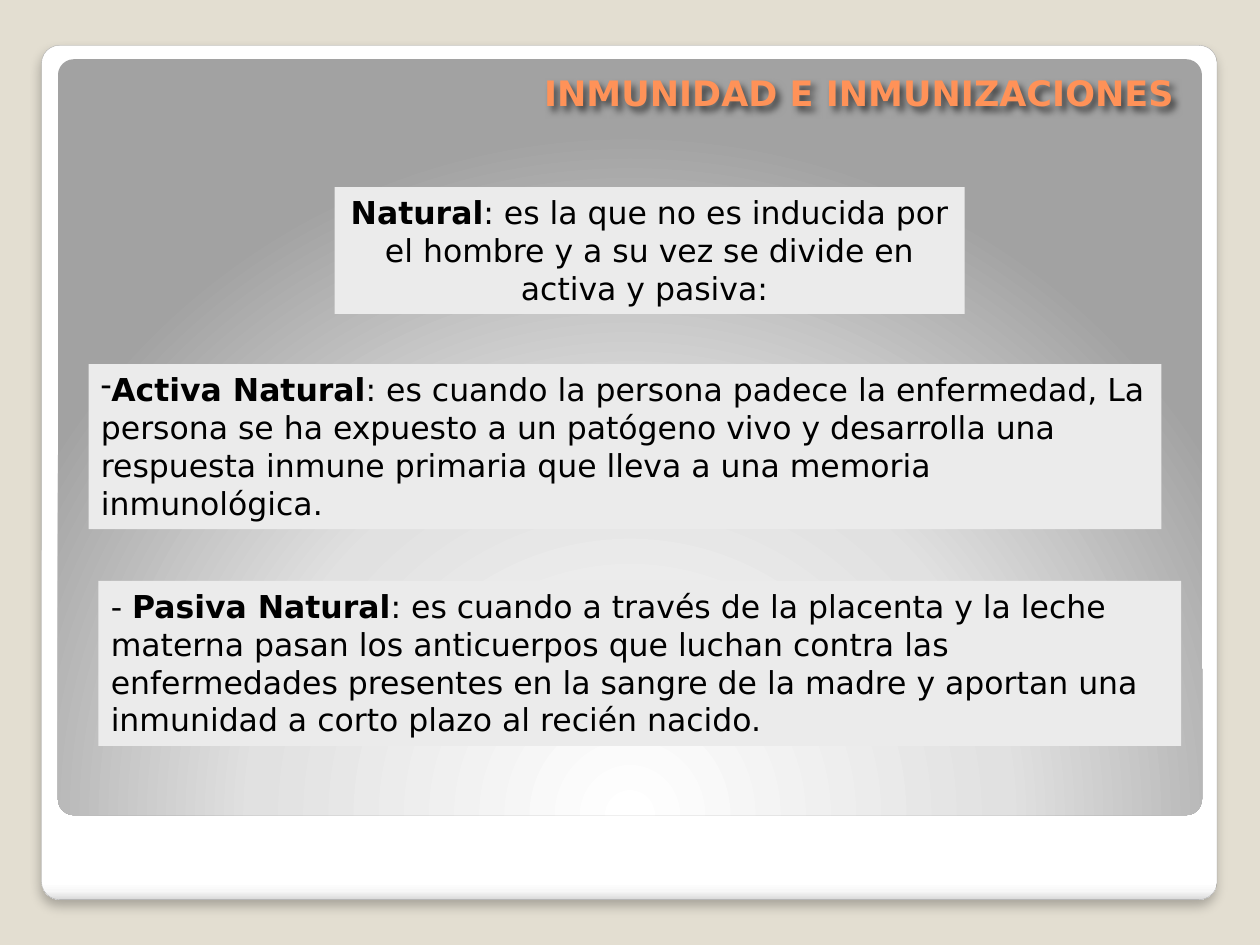
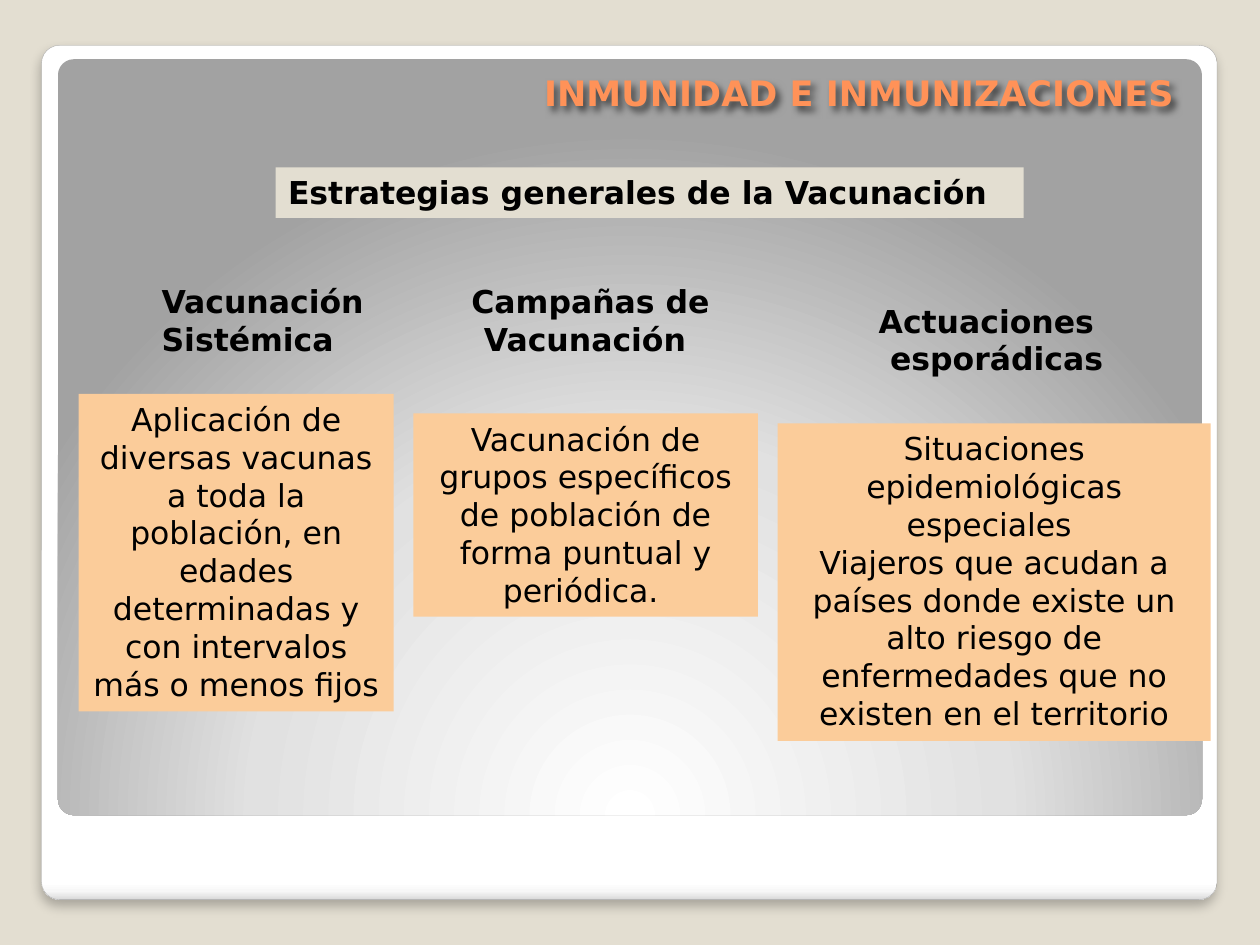
from lxml.etree import SubElement
from pptx import Presentation
from pptx.dml.color import RGBColor
from pptx.enum.shapes import MSO_SHAPE
from pptx.enum.text import MSO_ANCHOR, MSO_AUTO_SIZE, PP_ALIGN
from pptx.oxml.ns import qn
from pptx.util import Inches, Pt

WIDE, HIGH = 10, 7.5
COLS, ROWS = 128, 96
HUES = {"sand": "E3DED1", "mist": "EBEBEB", "peach": "FBCC9A",
        "ink": "000000", "title": "FF9258", "edge": "A4A4A4"}
HEAD = "INMUNIDAD E INMUNIZACIONES"
CARD = [(0, "FFFFFF"), (98, "FFFFFF"), (99, "F7F7F7"), (100, "DADADA")]
GLOW = [(0, "FFFFFF"), (55, "E1E1E1"), (100, "A2A2A2")]
LINE, PAD = 0.3025, 0.1
DENT = Inches(0.09)
BODY = {"name": "DejaVu Sans", "size": Pt(18)}
BIG = {"name": "DejaVu Sans", "size": Pt(20)}
GROW = {"word_wrap": True, "auto_size": MSO_AUTO_SIZE.SHAPE_TO_FIT_TEXT,
        "vertical_anchor": MSO_ANCHOR.TOP}
BASE = {"word_wrap": True, "auto_size": MSO_AUTO_SIZE.NONE,
        "vertical_anchor": MSO_ANCHOR.BOTTOM}
LEFT, MID = PP_ALIGN.LEFT, PP_ALIGN.CENTER

# column, row, columns wide, text lines, fill, alignment, paragraphs
KINDS = [
    (9, 37, 109, 4, "mist", LEFT, [("bullet", [
        ("Activa Natural", True),
        (": es cuando la persona padece la enfermedad, La persona se ha "
         "expuesto a un patógeno vivo y desarrolla una respuesta inmune "
         "primaria que lleva a una memoria inmunológica.", False)])]),
    (10, 59, 110, 4, "mist", LEFT, [("", [
        ("- ", False), ("Pasiva Natural", True),
        (": es cuando a través de la placenta y la leche materna pasan los "
         "anticuerpos que luchan contra las enfermedades presentes en la "
         "sangre de la madre y aportan una inmunidad a corto plazo al "
         "recién nacido.", False)])]),
    (34, 19, 64, 3, "mist", MID, [("", [
        ("Natural", True),
        (": es la que no es inducida por el hombre y a su vez se divide en "
         "activa y pasiva: ", False)])]),
]
PLANS = [
    (28, 17, 76, 1, "sand", LEFT,
     [("", [("Estrategias generales de la Vacunación", True)])]),
    (14, 28, 25, 2, None, LEFT,
     [("dent", [("Vacunación", True)]), ("dent", [("Sistémica", True)])]),
    (46, 28, 28, 2, None, MID, [("", [("Campañas de Vacunación ", True)])]),
    (88, 30, 26, 2, None, LEFT,
     [("", [("Actuaciones", True)]), ("dent", [("esporádicas", True)])]),
    (8, 40, 32, 8, "peach", MID, [("", [
        ("Aplicación de diversas vacunas a toda la población, en edades "
         "determinadas y con intervalos más o menos fijos ", False)])]),
    (42, 42, 35, 5, "peach", MID, [("", [
        ("Vacunación de grupos específicos de población de forma puntual y "
         "periódica. ", False)])]),
    (79, 43, 44, 8, "peach", MID, [
        ("", [("Situaciones epidemiológicas especiales ", False)]),
        ("", [("Viajeros que acudan a países donde existe un alto riesgo de "
               "enfermedades que no existen en el territorio", False)])]),
]


def tint(code):
    return RGBColor.from_string(code)


def apply(thing, style):
    for key, value in style.items():
        setattr(thing, key, value)


def node(root, tag, **keys):
    return SubElement(root, qn("a:" + tag), {k: str(v) for k, v in keys.items()})


def shade(shape, alpha, blur, dist, angle):
    shape.shadow.inherit = False
    root = shape._element.spPr.find(qn("a:effectLst"))
    cast = node(root, "outerShdw", blurRad=Pt(blur), dist=Pt(dist),
                dir=angle * 60000, algn="ctr", rotWithShape=0)
    node(node(cast, "srgbClr", val=HUES["ink"]), "alpha", val=alpha * 1000)


def blend(shape, stops, focus=None):
    shape.fill.gradient()
    root = shape._element.spPr.find(qn("a:gradFill"))
    for part in list(root):
        root.remove(part)
    band = node(root, "gsLst")
    for spot, code in stops:
        node(node(band, "gs", pos=spot * 1000), "srgbClr", val=code)
    if focus:
        ring = node(root, "path", path="circle")
        node(ring, "fillToRect",
             **{side: share * 1000 for side, share in zip("ltrb", focus)})
    else:
        node(root, "lin", ang=90 * 60000, scaled=0)


def panel(slide, x, y, w, h):
    shape = slide.shapes.add_shape(MSO_SHAPE.ROUNDED_RECTANGLE,
                                   *map(Inches, (x, y, w, h)))
    shape.adjustments[0] = 0.021
    shape.shadow.inherit = False
    shape.line.fill.background()
    return shape


def write(shape, paras, align, frame, font, hue):
    text = shape.text_frame
    apply(text, frame)
    for i, (mode, runs) in enumerate(paras):
        para = text.add_paragraph() if i else text.paragraphs[0]
        para.alignment = align
        props = para._p.get_or_add_pPr()
        if mode == "dent":
            props.set("marL", str(DENT))
        if mode == "bullet":
            node(props, "buChar", char="-")
        for words, bold in runs:
            run = para.add_run()
            run.text = words
            apply(run.font, {**font, "bold": bold})
            run.font.color.rgb = tint(hue)


def block(slide, col, row, span, lines, fill, align, paras):
    place = [Inches(n) for n in (col * WIDE / COLS, row * HIGH / ROWS,
                                 span * WIDE / COLS, PAD + lines * LINE)]
    if fill:
        shape = slide.shapes.add_shape(MSO_SHAPE.RECTANGLE, *place)
        shape.shadow.inherit = False
        shape.fill.solid()
        shape.fill.fore_color.rgb = tint(HUES[fill])
        shape.line.fill.background()
    else:
        shape = slide.shapes.add_textbox(*place)
    write(shape, paras, align, GROW, BODY, HUES["ink"])


def build(deck, blocks):
    slide = deck.slides.add_slide(deck.slide_layouts[6])
    card = panel(slide, 0.33, 0.36, 9.33, 6.78)
    blend(card, CARD)
    card.line.color.rgb = tint(HUES["edge"])
    card.line.width = Pt(0.16)
    shade(card, 25, 6, 4, 90)
    blend(panel(slide, 0.46, 0.47, 9.08, 6), GLOW, (50, 175, 50, -75))
    head = slide.shapes.add_textbox(*map(Inches, (4.22, 0.39, 5.52, 0.56)))
    write(head, [("", [(HEAD, True)])], LEFT, BASE, BIG, HUES["title"])
    shade(head, 60, 4, 3, 50)
    for item in blocks:
        block(slide, *item)


def main():
    deck = Presentation()
    apply(deck, {"slide_width": Inches(WIDE), "slide_height": Inches(HIGH)})
    back = deck.slide_master.background.fill
    back.solid()
    back.fore_color.rgb = tint(HUES["sand"])
    for blocks in (KINDS, PLANS):
        build(deck, blocks)
    deck.save("out.pptx")


if __name__ == "__main__":
    main()
